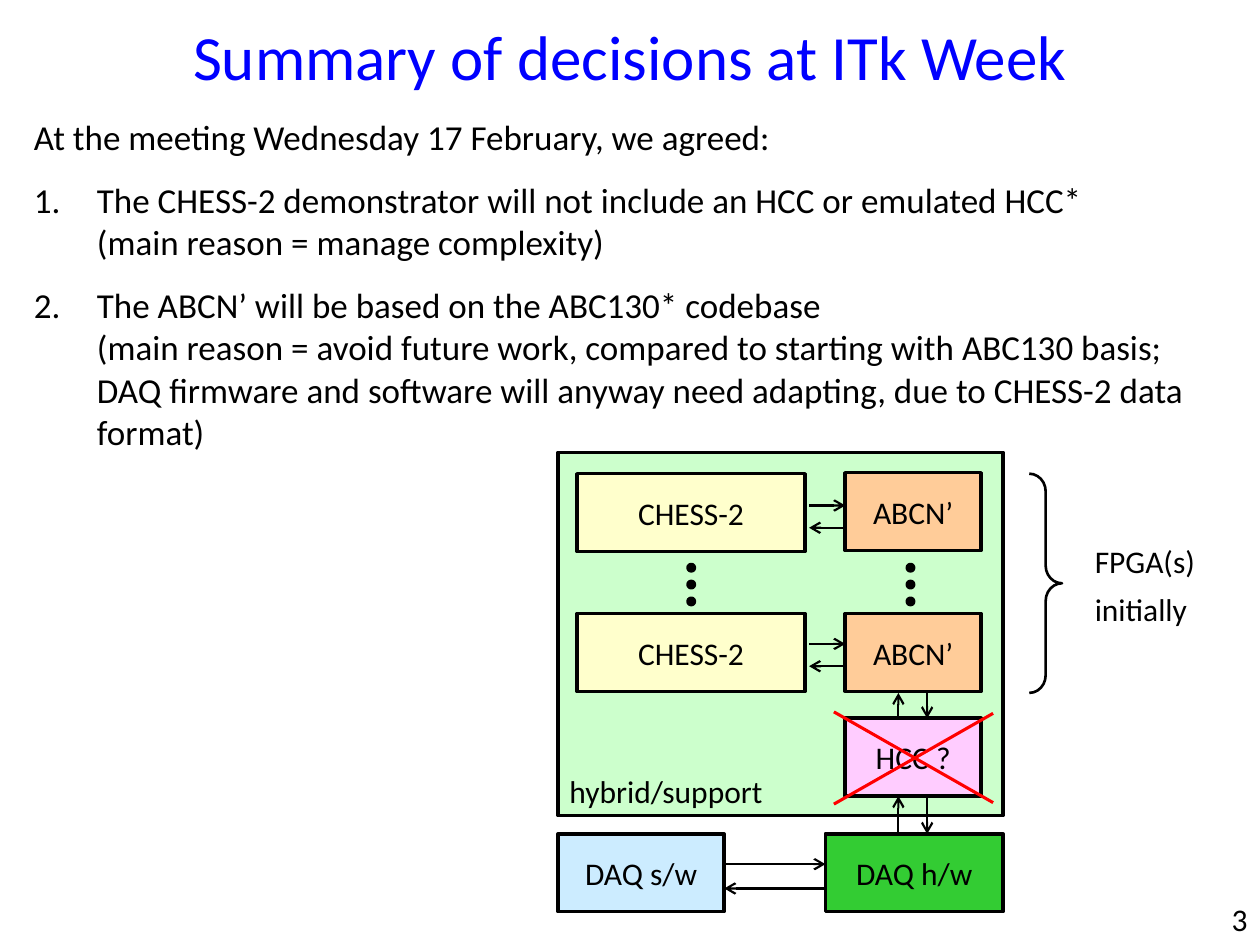
from lxml import etree
from pptx import Presentation
from pptx.dml.color import RGBColor
from pptx.enum.shapes import MSO_CONNECTOR, MSO_SHAPE
from pptx.enum.text import MSO_ANCHOR, MSO_AUTO_SIZE, PP_ALIGN
from pptx.oxml.ns import qn
from pptx.util import Cm, Pt

RECTANGLE = MSO_SHAPE.RECTANGLE
OVAL = MSO_SHAPE.OVAL
BRACE = MSO_SHAPE.RIGHT_BRACE
STRAIGHT = MSO_CONNECTOR.STRAIGHT
LEFT, CENTER, RIGHT = PP_ALIGN.LEFT, PP_ALIGN.CENTER, PP_ALIGN.RIGHT
TOP, MIDDLE = MSO_ANCHOR.TOP, MSO_ANCHOR.MIDDLE
NO_AUTOFIT = MSO_AUTO_SIZE.NONE

BLACK = RGBColor(0x00, 0x00, 0x00)
BLUE = RGBColor(0x00, 0x00, 0xFF)
RED = RGBColor(0xFF, 0x00, 0x00)
PALE_GREEN = RGBColor(0xCC, 0xFF, 0xCC)
YELLOW = RGBColor(0xFF, 0xFF, 0xCC)
ORANGE = RGBColor(0xFF, 0xCC, 0x99)
PINK = RGBColor(0xFF, 0xCC, 0xFF)
GREEN = RGBColor(0x33, 0xCC, 0x33)
PALE_BLUE = RGBColor(0xCC, 0xEC, 0xFF)

BOX_HEIGHT = 1.57
CHESS_LEFT, CHESS_WIDTH = 11.63, 4.6
CHIP_LEFT, CHIP_WIDTH = 17.04, 2.74
DAQ_TOP = 16.81
UP_X, DOWN_X = 18.11, 18.69

INTRODUCTION = "At the meeting Wednesday 17 February, we agreed:"
DECISIONS = [
    "The CHESS-2 demonstrator will not include an HCC or emulated HCC*\n"
    "(main reason = manage complexity)",
    "The ABCN’ will be based on the ABC130* codebase\n"
    "(main reason = avoid future work, compared to starting with ABC130 basis; "
    "DAQ firmware and software will anyway need adapting, due to CHESS-2 data format)",
]


def set_attributes(target, values):
    for name, value in values.items():
        setattr(target, name, value)


class DiagramSlide:
    font_name = "Calibri"
    label_size = 18

    def __init__(self, presentation):
        self.slide = presentation.slides.add_slide(presentation.slide_layouts[1])
        self.shapes = self.slide.shapes

    def place(self, shape, left, top, width, height):
        set_attributes(shape, {"left": Cm(left), "top": Cm(top),
                               "width": Cm(width), "height": Cm(height)})

    def fill_text(self, shape, paragraphs, size=label_size, color=BLACK,
                  alignment=LEFT, anchor=TOP, space_after=0):
        frame = shape.text_frame
        set_attributes(frame, {"word_wrap": True, "auto_size": NO_AUTOFIT,
                               "vertical_anchor": anchor})
        for index, text in enumerate(paragraphs):
            paragraph = frame.add_paragraph() if index else frame.paragraphs[0]
            set_attributes(paragraph, {"text": text, "alignment": alignment,
                                       "space_before": Pt(0),
                                       "space_after": Pt(space_after)})
            set_attributes(paragraph.font, {"name": self.font_name, "size": Pt(size)})
            paragraph.font.color.rgb = color
        return frame.paragraphs

    def title(self, text, *position):
        shape = self.shapes.title
        self.place(shape, *position)
        self.fill_text(shape, [text], 36, BLUE, CENTER, MIDDLE)

    def numbered_list(self, introduction, items, *position):
        shape = self.slide.placeholders[1]
        self.place(shape, *position)
        first, *numbered = self.fill_text(shape, [introduction, *items], 20, space_after=12)
        self.indent(first, 0, "a:buNone")
        for paragraph in numbered:
            self.indent(paragraph, 1.27, "a:buAutoNum", type="arabicPeriod")

    def indent(self, paragraph, hanging, bullet, **attributes):
        properties = paragraph._p.get_or_add_pPr()
        properties.set("marL", str(Cm(hanging)))
        properties.set("indent", str(-Cm(hanging)))
        mark = etree.Element(qn(bullet), **attributes)
        properties.find(qn("a:spcAft")).addnext(mark)

    def text(self, paragraphs, *position, **style):
        shape = self.shapes.add_textbox(*map(Cm, position))
        self.fill_text(shape, paragraphs, **style)

    def outline(self, kind, *position, fill=None, width=2, parent=None):
        shape = (parent or self).shapes.add_shape(kind, *map(Cm, position))
        shape.shadow.inherit = False
        if fill is None:
            shape.fill.background()
        else:
            shape.fill.solid()
            shape.fill.fore_color.rgb = fill
        shape.line.color.rgb = BLACK
        shape.line.width = Pt(width)
        return shape

    def box(self, label, fill, left, top, width, height=BOX_HEIGHT):
        shape = self.outline(RECTANGLE, left, top, width, height, fill=fill)
        self.fill_text(shape, [label], alignment=CENTER, anchor=MIDDLE)

    def dots(self, left, top):
        group = self.shapes.add_group_shape()
        for index in range(3):
            self.outline(OVAL, left, top + index * 0.34, 0.13, 0.13,
                         fill=BLACK, parent=group)

    def brace(self, *position):
        shape = self.outline(BRACE, *position, width=1.5)
        shape.adjustments[0] = 0.54

    def line(self, *ends, color=BLACK, width=1.25, arrow_end=None):
        connector = self.shapes.add_connector(STRAIGHT, *map(Cm, ends))
        connector.line.color.rgb = color
        connector.line.width = Pt(width)
        properties = connector._element.spPr
        if arrow_end:
            etree.SubElement(properties.find(qn("a:ln")), qn(arrow_end), type="arrow")
        etree.SubElement(properties, qn("a:effectLst"))

    def horizontal_pair(self, left, right, upper, lower):
        self.line(left, upper, right, upper, arrow_end="a:tailEnd")
        self.line(left, lower, right, lower, arrow_end="a:headEnd")

    def vertical_pair(self, top, bottom):
        self.line(UP_X, top, UP_X, bottom, arrow_end="a:headEnd")
        self.line(DOWN_X, top, DOWN_X, bottom, arrow_end="a:tailEnd")


def main():
    presentation = Presentation()
    presentation.slide_width, presentation.slide_height = Cm(25.4), Cm(19.05)
    page = DiagramSlide(presentation)

    page.title("Summary of decisions at ITk Week", 1.27, 0.33, 22.86, 1.57)
    page.numbered_list(INTRODUCTION, DECISIONS, 0.43, 2.21, 24.43, 8.15)
    page.text(["3"], 23.5, 18.01, 1.9, 1.02, alignment=RIGHT, anchor=MIDDLE)

    page.outline(RECTANGLE, 11.25, 9.12, 8.97, 7.32, fill=PALE_GREEN)
    page.text(["hybrid/support"], 11.23, 15.44, 5.03, 1.02)

    for chess_top, chip_top, arrow_top in [(9.55, 9.53, 10.19), (12.37, 12.37, 12.98)]:
        page.box("CHESS-2", YELLOW, CHESS_LEFT, chess_top, CHESS_WIDTH)
        page.box("ABCN’", ORANGE, CHIP_LEFT, chip_top, CHIP_WIDTH)
        page.horizontal_pair(16.31, CHIP_LEFT, arrow_top, arrow_top + 0.45)
    for dots_left in (13.87, 18.29):
        page.dots(dots_left, 11.38)

    page.box("HCC ?", PINK, CHIP_LEFT, 14.48, CHIP_WIDTH)
    page.box("DAQ h/w", GREEN, 16.64, DAQ_TOP, 3.58)
    page.box("DAQ s/w", PALE_BLUE, 11.25, DAQ_TOP, 3.35)
    page.horizontal_pair(14.6, 16.64, 17.42, 17.91)
    page.vertical_pair(13.97, 14.48)
    page.vertical_pair(16.05, DAQ_TOP)

    page.brace(20.75, 9.55, 0.66, 4.42)
    page.text(["FPGA(s)", "initially"], 21.82, 10.8, 2.77, 2.01, space_after=6)

    for start, end in [(14.35, 16.18), (16.21, 14.38)]:
        page.line(16.81, start, 20.02, end, color=RED, width=1.75)

    presentation.save("out.pptx")


if __name__ == "__main__":
    main()
